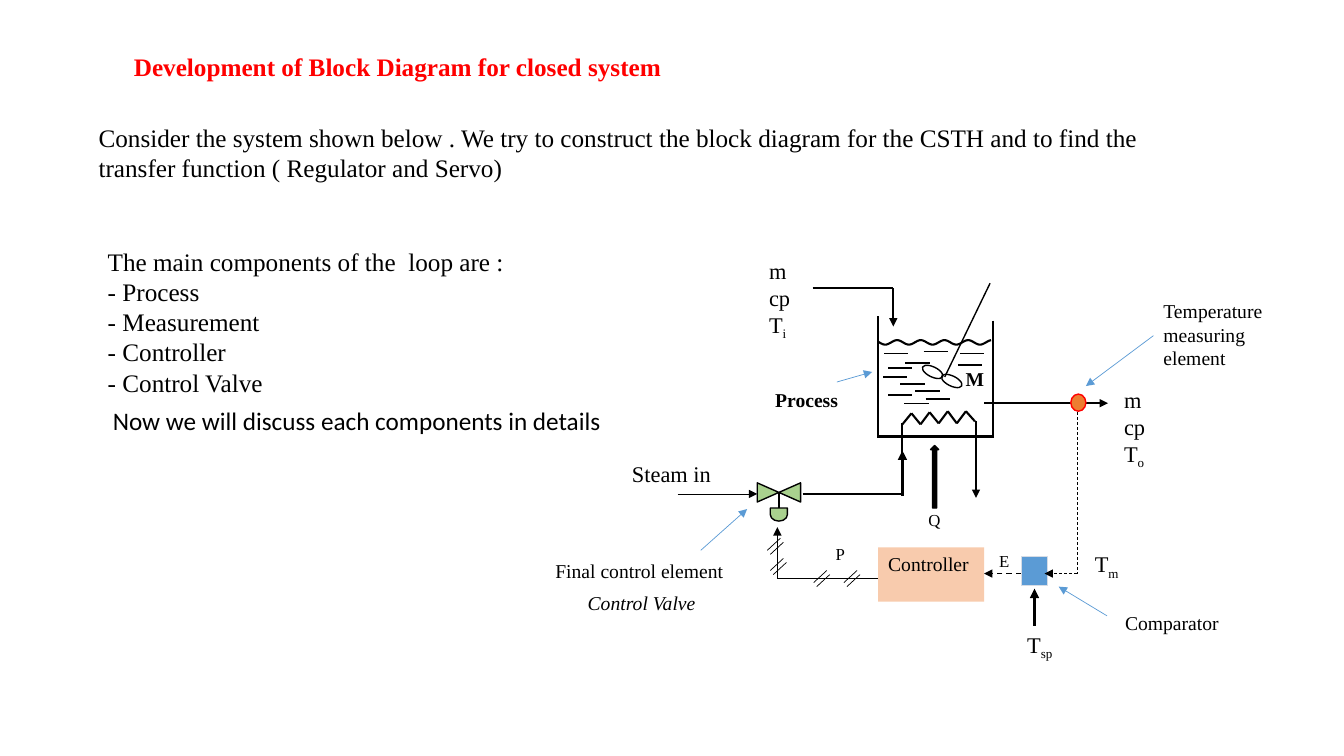
from itertools import pairwise
from math import cos, tau
from lxml.etree import SubElement
from pptx import Presentation
from pptx.dml.color import RGBColor
from pptx.enum.dml import MSO_LINE
from pptx.enum.shapes import MSO_CONNECTOR, MSO_SHAPE as SHAPE
from pptx.enum.text import MSO_ANCHOR, MSO_AUTO_SIZE, PP_ALIGN
from pptx.oxml.ns import qn
from pptx.util import Inches, Pt

CELL = Inches(0.01)
COLUMNS, ROWS = 1333, 750
BLACK = RGBColor(0x00, 0x00, 0x00)
RED = RGBColor(0xFF, 0x00, 0x00)
BLUE = RGBColor(0x5B, 0x9B, 0xD5)
GREEN = RGBColor(0xA9, 0xD1, 0x8E)
ORANGE = RGBColor(0xED, 0x7D, 0x31)
PEACH = RGBColor(0xF8, 0xCB, 0xAD)
PALE = RGBColor(0xD6, 0xDC, 0xE5)

deck = Presentation()
deck.slide_width, deck.slide_height = COLUMNS * CELL, ROWS * CELL
page = deck.slides.add_slide(deck.slide_layouts[6])


def write(box, text, size, changes):
    frame = box.text_frame
    frame.word_wrap = True
    frame.vertical_anchor = MSO_ANCHOR.TOP
    style = {"name": "Times New Roman", "size": Pt(size)} | changes
    colour = style.pop("colour", BLACK)
    for index, row in enumerate(text.split("\n")):
        para = frame.paragraphs[0] if index == 0 else frame.add_paragraph()
        para.alignment = PP_ALIGN.LEFT
        main, _, subscript = row.partition("_")
        for part, baseline in ((main, 0), (subscript, -25000)):
            if part:
                span = para.add_run()
                span.text = part
                span.font.color.rgb = colour
                for name, value in style.items():
                    setattr(span.font, name, value)
                if baseline:
                    span._r.get_or_add_rPr().set("baseline", str(baseline))


def connect(start, end, width, arrow=False, colour=BLACK, dash=None):
    ends = [place * CELL for place in (*start, *end)]
    link = diagram.add_connector(MSO_CONNECTOR.STRAIGHT, *ends)
    link.line.color.rgb = colour
    link.line.width = Pt(width)
    if dash:
        link.line.dash_style = dash
    outline = link._element.spPr
    if arrow:
        SubElement(outline.find(qn("a:ln")), qn("a:tailEnd"), type="triangle")
    SubElement(outline, qn("a:effectLst"))


BODY_TEXTS = [
    ((123, 46, 924, 40), "Development of Block Diagram for closed system",
     {"bold": True, "colour": RED}),
    ((88, 116, 1080, 71), "Consider the system shown below . We try to construct the block "
     "diagram for the CSTH and to find the transfer function ( Regulator and Servo)", {}),
    ((97, 239, 671, 162), "The main components of the  loop are :\n- Process\n- Measurement\n"
     "- Controller\n- Control Valve", {}),
    ((102, 397, 512, 40), "Now we will discuss each components in details",
     {"name": "Calibri"}),
]
for place, text, changes in BODY_TEXTS:
    box = page.shapes.add_textbox(*[value * CELL for value in place])
    write(box, text, 18, changes)
    box.text_frame.auto_size = MSO_AUTO_SIZE.SHAPE_TO_FIT_TEXT

diagram = page.shapes.add_group_shape().shapes

TANK_WALLS = [((985, 318), (985, 433)), ((871, 314), (871, 433)), ((986, 433), (870, 433))]
for start, end in TANK_WALLS:
    connect(start, end, 1.5)

wave = [(x * CELL, round((339.7 - 2.2 * cos(tau * (x - 878) / 23.5 + tau / 2)) * CELL))
        for x in range(871, 984)]
builder = diagram.build_freeform(*wave[0])
builder.add_line_segments(wave[1:], close=False)
surface = builder.convert_to_shape()
surface.shadow.inherit = False
surface.fill.background()
surface.line.color.rgb = BLACK
surface.line.width = Pt(1.5)

WATER_DASHES = [(881, 392), (893, 381), (877, 351), (876, 374), (952, 351), (908, 388),
                (918, 396), (881, 365), (950, 362), (897, 400), (916, 349), (898, 360)]
for x, y in WATER_DASHES:
    connect((x, y), (x + 24, y), 1)

COIL = [(895, 421), (904, 410), (913, 421), (922, 409), (931, 420), (940, 408),
        (949, 420), (958, 408), (967, 418)]
for start, end in pairwise(COIL):
    connect(start, end, 1.5)

PIPES = [
    ((982, 281), (937, 374), 1, False),
    ((806, 286), (886, 286), 1.5, False),
    ((886, 286), (886, 324), 1.5, True),
    ((895, 492), (895, 447), 2.25, True),
    ((895, 420), (895, 474), 1.5, False),
    ((968, 418), (968, 494), 1.5, True),
    ((976, 400), (1099, 400), 1.5, True),
    ((771, 573), (771, 523), 1, True),
    ((1026, 621), (1026, 584), 2.25, True),
    ((796, 490), (896, 490), 1.5, False),
    ((672, 490), (751, 490), 0.5, True),
    ((871, 574), (771, 574), 0.5, False),
]
for start, end, width, arrow in PIPES:
    connect(start, end, width, arrow)
connect((1023, 569), (976, 569), 1, True, dash=MSO_LINE.DASH)

SYMBOLS = [
    (SHAPE.OVAL, (933, 373, 22, 10), 25.9, None, BLACK, 1, ""),
    (SHAPE.OVAL, (914, 364, 22, 10), 25.9, None, BLACK, 1, ""),
    (SHAPE.RIGHT_ARROW, (896, 469, 62, 8), 270, BLACK, BLACK, 1, ""),
    (SHAPE.FLOWCHART_COLLATE, (763, 467, 19, 43), 90, GREEN, BLACK, 1, ""),
    (SHAPE.FLOWCHART_DELAY, (766, 502, 13, 17), 90, GREEN, BLACK, 1, ""),
    (SHAPE.RECTANGLE, (1013, 552, 26, 29), 0, BLUE, PALE, 0.5, ""),
    (SHAPE.OVAL, (1062, 391, 15, 17), 0, ORANGE, RED, 1, ""),
    (SHAPE.RECTANGLE, (871, 543, 105, 54), 0, PEACH, None, 0, "Controller"),
]
for kind, place, turn, fill, edge, width, text in SYMBOLS:
    symbol = diagram.add_shape(kind, *[value * CELL for value in place])
    symbol.shadow.inherit = False
    symbol.rotation = turn
    if fill is None:
        symbol.fill.background()
    else:
        symbol.fill.solid()
        symbol.fill.fore_color.rgb = fill
    if edge is None:
        symbol.line.fill.background()
    else:
        symbol.line.color.rgb = edge
        symbol.line.width = Pt(width)
    if text:
        write(symbol, text, 14, {})

connect((773, 488), (773, 504), 1.5)
for x, y in [(850, 566), (820, 566), (774, 534), (777, 554)]:
    for right, down in [(0, 0), (3, 4)]:
        connect((x + right, y + down), (x + right - 13, y + down + 12), 0.5)

POINTERS = [((1144, 333), (1077, 383)), ((1098, 611), (1050, 582)),
            ((695, 546), (741, 505)), ((830, 379), (865, 369))]
for start, end in POINTERS:
    connect(start, end, 0.5, True, BLUE)
connect((1069, 409), (1069, 569), 0.5, dash=MSO_LINE.DASH)
connect((1068, 569), (1036, 569), 0.5, True, dash=MSO_LINE.DASH)

LABELS = [
    ((753, 250, 47, 91), "m\ncp\nT_i", 16, {}),
    ((617, 452, 100, 37), "Steam in", 16, {}),
    ((1105, 378, 48, 91), "m\ncp\nT_o", 16, {}),
    ((948, 359, 37, 34), "M", 14, {"bold": True}),
    ((911, 501, 29, 21), "Q", 12, {}),
    ((1076, 541, 49, 37), "T_m", 16, {}),
    ((1009, 621, 67, 37), "T_sp", 16, {}),
    ((981, 541, 21, 21), "E", 12, {}),
    ((1106, 601, 133, 34), "Comparator", 14, {}),
    ((759, 380, 90, 34), "Process", 14, {"bold": True}),
    ((541, 550, 206, 34), "Final control element", 14, {}),
    ((1144, 292, 141, 81), "Temperature measuring element", 14, {}),
    ((573, 581, 142, 34), "Control Valve", 14, {"italic": True}),
    ((819, 535, 21, 30), "P", 12, {}),
]
for place, text, size, changes in LABELS:
    box = diagram.add_textbox(*[value * CELL for value in place])
    write(box, text, size, changes)

deck.save("out.pptx")
